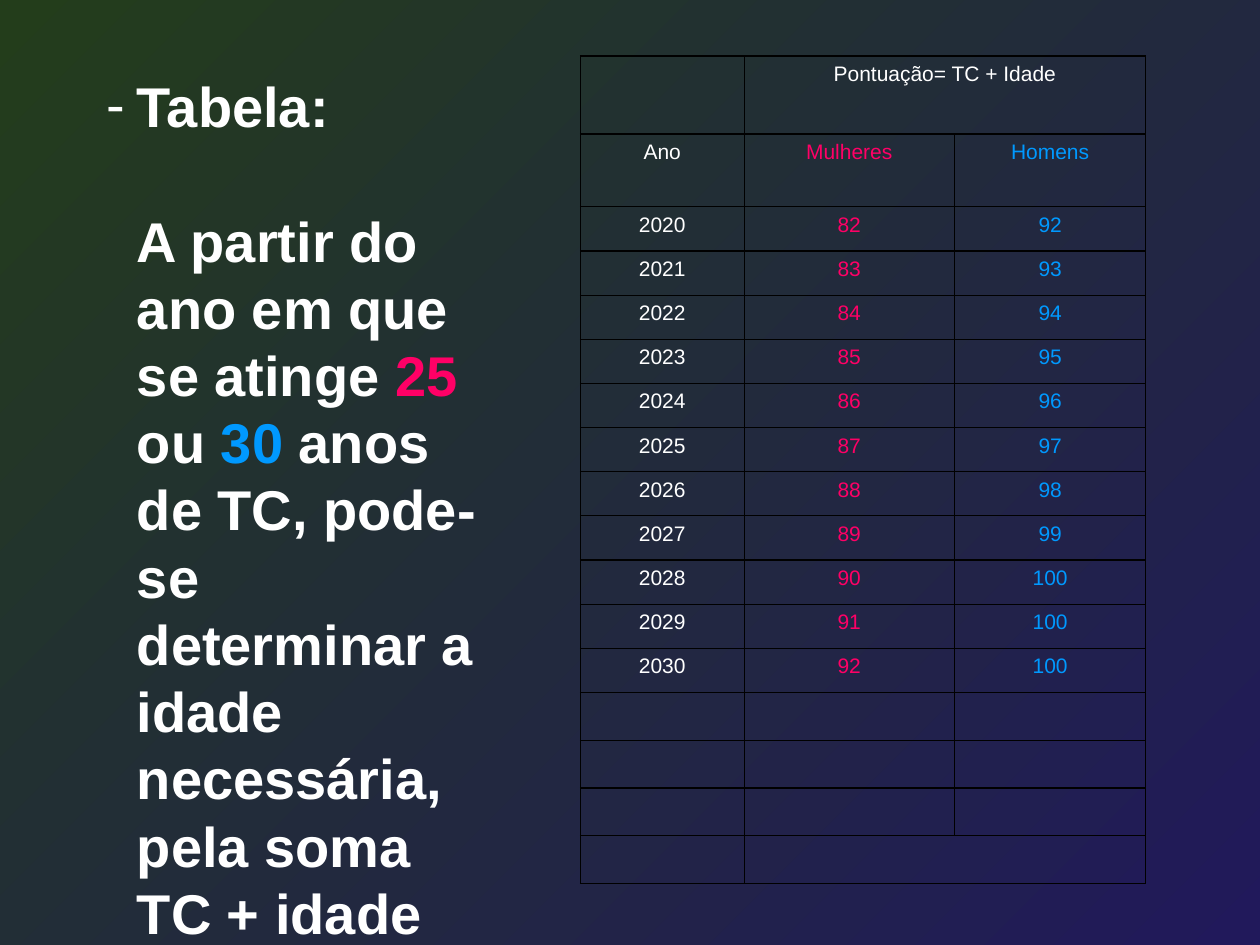
from lxml.etree import SubElement
from pptx import Presentation
from pptx.dml.color import RGBColor as RGB
from pptx.enum.text import MSO_ANCHOR as Anchor, PP_ALIGN as Align
from pptx.oxml.ns import qn
from pptx.util import Cm, Pt

COLORS = {
    "text": "FFFFFF",
    "women": "FF0066",
    "men": "0099FF",
    "border": "000000",
    "green": "233D1B",
    "indigo": "21195B",
}


def add_run(paragraph, text, color, size, bold):
    run = paragraph.add_run()
    run.text = text
    for name, value in {"name": "Arial", "size": Pt(size), "bold": bold}.items():
        setattr(run.font, name, value)
    run.font.color.rgb = RGB.from_string(COLORS[color])


def add_borders(cell):
    properties = cell._tc.get_or_add_tcPr()
    for side in ("lnL", "lnR", "lnT", "lnB"):
        line = SubElement(properties, qn(f"a:{side}"), w=str(Pt(0.75)))
        fill = SubElement(line, qn("a:solidFill"))
        SubElement(fill, qn("a:srgbClr"), val=COLORS["border"])


prs = Presentation()
prs.slide_width, prs.slide_height = Cm(25.4), Cm(19.05)
slide = prs.slides.add_slide(prs.slide_layouts[6])

# Diagonal background
background = slide.background.fill
background.gradient()
background.gradient_angle = 315
for stop, color in zip(background.gradient_stops, ("green", "indigo")):
    stop.color.rgb = RGB.from_string(COLORS[color])

# Explanation on the left
explanation = slide.shapes.add_textbox(Cm(1.9), Cm(1.32), Cm(8.2), Cm(10.62)).text_frame
explanation.word_wrap = True
explanation.vertical_anchor = Anchor.TOP

heading = explanation.paragraphs[0]
rule = explanation.add_paragraph()
rule.space_before = Pt(38.4)
add_run(heading, "Tabela:", "text", 32, True)
for text, color in (
    ("A partir do ano em que se atinge ", "text"),
    ("25", "women"),
    (" ou ", "text"),
    ("30", "men"),
    (" anos de TC, pode-se determinar a idade necessária, pela soma TC + idade", "text"),
):
    add_run(rule, text, color, 32, True)

for paragraph, indent in ((heading, Cm(-0.61)), (rule, 0)):
    paragraph.line_spacing = 1.0
    layout = paragraph._p.get_or_add_pPr()
    layout.set("marL", str(Cm(0.61)))
    layout.set("indent", str(indent))
bullet_color = SubElement(heading._p.pPr, qn("a:buClr"))
SubElement(bullet_color, qn("a:srgbClr"), val=COLORS["text"])
SubElement(heading._p.pPr, qn("a:buFont"), typeface="Arial")
SubElement(heading._p.pPr, qn("a:buChar"), char="-")

# Points by year: women rise to 92, men stop at 100
rows = [("", "Pontuação= TC + Idade", ""), ("Ano", "Mulheres", "Homens")]
for step in range(11):
    rows.append((str(2020 + step), str(82 + step), str(min(92 + step, 100))))
rows += [("", "", "")] * 4

points = slide.shapes.add_table(
    len(rows), 3, Cm(11.7), Cm(1.13), Cm(11.4), Cm(16.9)
).table
for option in ("first_row", "horz_banding"):
    setattr(points, option, False)
for column, width in zip(points.columns, (3.3, 4.24, 3.86)):
    column.width = Cm(width)
for row, height in zip(points.rows, [1.57, 1.47] + [0.89] * 15):
    row.height = Cm(height)

for r, values in enumerate(rows):
    for c, value in enumerate(values):
        cell = points.cell(r, c)
        add_borders(cell)
        cell.fill.background()
        if value:
            color = ("text", "women", "men")[c] if r else "text"
            paragraph = cell.text_frame.paragraphs[0]
            paragraph.alignment = Align.CENTER
            add_run(paragraph, value, color, 12, False)
        else:
            for margin in ("margin_top", "margin_bottom"):
                setattr(cell, margin, Cm(0.1))

# The first and last rows join the two score columns
for r in (0, len(rows) - 1):
    points.cell(r, 1).merge(points.cell(r, 2))

prs.save("out.pptx")
